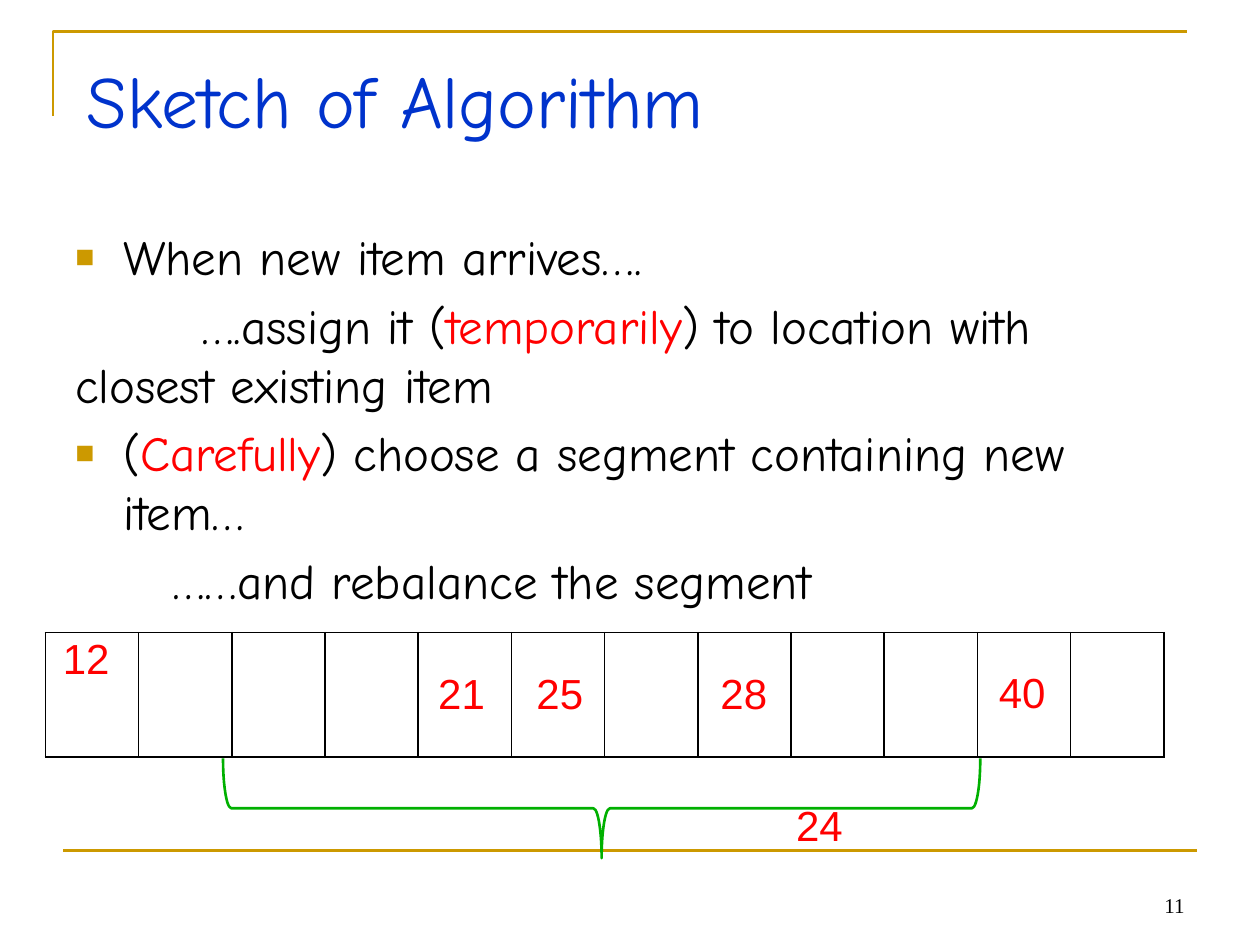
from typing import NamedTuple

from lxml.etree import SubElement
from pptx import Presentation
from pptx.dml.color import RGBColor
from pptx.enum.shapes import MSO_CONNECTOR as Connector, MSO_SHAPE as Preset
from pptx.enum.text import MSO_ANCHOR as Anchor, PP_ALIGN as Align
from pptx.oxml.ns import qn
from pptx.util import Inches, Pt

GOLD, BLUE, BLACK, RED = "CC9900", "0033CC", "000000", "FF0000"
GREEN, WHITE = "00B000", "FFFFFF"
HAND_FONT, NUMBER_FONT, PAGE_FONT = "Comic Neue", "Arial", "Times New Roman"
CELL_COUNT, CELL_WIDTH, CELL_HEIGHT = 12, 0.74, 0.99


class Span(NamedTuple):
    text: str
    color: str = BLACK


class Line(NamedTuple):
    spans: list[Span]
    bullet: bool = False
    first_indent: float = 0
    space_before: float = 5.6


class Item(NamedTuple):
    value: str
    left: float
    top: float


STEPS = [
    Line([Span("When new item arrives….")], bullet=True, space_before=0),
    Line([Span("….assign it ("), Span("temporarily", RED),
          Span(") to location with closest existing item")], first_indent=1),
    Line([Span("("), Span("Carefully", RED),
          Span(") choose a segment containing new item…")], bullet=True),
    Line([Span("……and rebalance the segment")], first_indent=0.77),
]
ITEMS = [
    Item("12", 0.4, 4.97),
    Item("28", 5.62, 5.25),
    Item("25", 4.16, 5.25),
    Item("21", 3.38, 5.25),
    Item("24", 6.22, 6.3),
    Item("40", 7.83, 5.24),
]


def rgb(color: str) -> RGBColor:
    return RGBColor.from_string(color)


def set_indent(paragraph, line: Line) -> None:
    properties = paragraph._p.get_or_add_pPr()
    hanging = 0.38 if line.bullet else 0
    properties.set("marL", str(Inches(hanging)))
    properties.set("indent", str(Inches(line.first_indent - hanging)))
    if line.bullet:
        bullet_color = SubElement(properties, qn("a:buClr"))
        SubElement(bullet_color, qn("a:srgbClr"), val=GOLD)
        SubElement(properties, qn("a:buSzPct"), val="65000")
        SubElement(properties, qn("a:buFont"), typeface=NUMBER_FONT)
        SubElement(properties, qn("a:buChar"), char="■")


def add_text(slide, lines: list[Line], left: float, top: float, width: float,
             height: float, *, size: float, font: str,
             align=Align.LEFT, anchor=Anchor.TOP) -> None:
    frame = slide.shapes.add_textbox(
        Inches(left), Inches(top), Inches(width), Inches(height)).text_frame
    frame.word_wrap = True
    frame.vertical_anchor = anchor
    for index, line in enumerate(lines):
        paragraph = frame.add_paragraph() if index else frame.paragraphs[0]
        paragraph.alignment = align
        paragraph.space_before = Pt(line.space_before)
        set_indent(paragraph, line)
        for span in line.spans:
            run = paragraph.add_run()
            run.text = span.text
            run.font.size = Pt(size)
            run.font.name = font
            run.font.color.rgb = rgb(span.color)


def add_label(slide, text: str, left: float, top: float, width: float,
              height: float, *, color: str = BLACK, **text_format) -> None:
    add_text(slide, [Line([Span(text, color)], space_before=0)],
             left, top, width, height, **text_format)


def set_line(shape, color: str) -> None:
    shape.line.color.rgb = rgb(color)
    shape.line.width = Pt(1.5)


def add_frame(slide) -> None:
    builder = slide.shapes.build_freeform(Inches(0.42), Inches(0.92))
    builder.add_line_segments(
        [(Inches(0.42), Inches(0.25)), (Inches(9.42), Inches(0.25))], close=False)
    corner = builder.convert_to_shape()
    corner.shadow.inherit = False
    corner.fill.background()
    set_line(corner, GOLD)
    footer_rule = slide.shapes.add_connector(
        Connector.STRAIGHT, Inches(0.5), Inches(6.75), Inches(9.5), Inches(6.75))
    set_line(footer_rule, GOLD)
    SubElement(footer_rule._element.spPr, qn("a:effectLst"))


def add_border(cell) -> None:
    properties = cell._tc.get_or_add_tcPr()
    for position, side in enumerate(("a:lnL", "a:lnR", "a:lnT", "a:lnB")):
        border = properties.makeelement(qn(side), {"w": str(Pt(1))})
        fill = SubElement(border, qn("a:solidFill"))
        SubElement(fill, qn("a:srgbClr"), val=BLACK)
        properties.insert(position, border)


def add_array(slide) -> None:
    array = slide.shapes.add_table(
        1, CELL_COUNT, Inches(0.36), Inches(5.02),
        Inches(CELL_COUNT * CELL_WIDTH), Inches(CELL_HEIGHT)).table
    array.first_row = array.horz_banding = False
    for column in array.columns:
        column.width = Inches(CELL_WIDTH)
    for cell in array.iter_cells():
        cell.fill.background()
        add_border(cell)


def add_segment_brace(slide) -> None:
    brace = slide.shapes.add_shape(
        Preset.LEFT_BRACE, Inches(4.38), Inches(3.41), Inches(0.79), Inches(6.01))
    brace.rotation = 270
    brace.shadow.inherit = False
    brace.fill.solid()
    brace.fill.fore_color.rgb = rgb(WHITE)
    set_line(brace, GREEN)


def main() -> None:
    deck = Presentation()
    deck.slide_width, deck.slide_height = Inches(10), Inches(7.5)
    slide = deck.slides.add_slide(deck.slide_layouts[6])
    add_frame(slide)
    add_label(slide, "Sketch of Algorithm", 0.59, 0.39, 8.99, 0.75,
              size=42, font=HAND_FONT, color=BLUE)
    add_text(slide, STEPS, 0.5, 1.75, 9, 4.95, size=28, font=HAND_FONT)
    add_label(slide, "11", 7.17, 6.83, 2.33, 0.5, size=12, font=PAGE_FONT,
              align=Align.RIGHT, anchor=Anchor.BOTTOM)
    add_array(slide)
    for item in ITEMS:
        add_label(slide, item.value, item.left, item.top, 0.6, 0.5,
                  size=24, font=NUMBER_FONT, color=RED)
    add_segment_brace(slide)
    deck.save("out.pptx")


if __name__ == "__main__":
    main()
